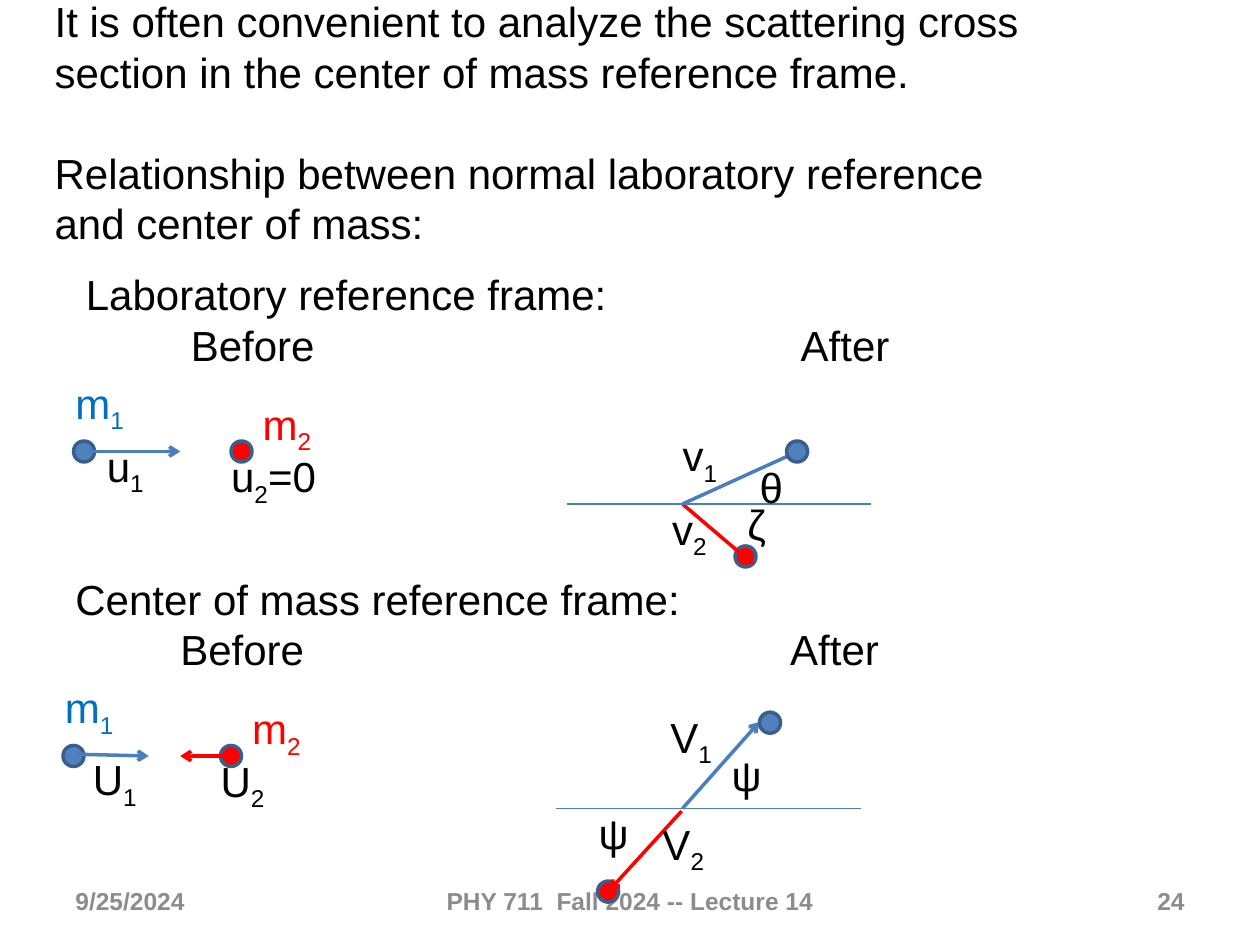
from dataclasses import dataclass

from lxml.etree import SubElement
from pptx import Presentation
from pptx.dml.color import RGBColor
from pptx.enum.shapes import MSO_CONNECTOR as Conn, MSO_SHAPE as Shape
from pptx.enum.text import MSO_ANCHOR as Anchor, MSO_AUTO_SIZE as Fit, PP_ALIGN as Align
from pptx.oxml.ns import qn
from pptx.util import Pt


@dataclass(frozen=True)
class Theme:
    font: str = "Arial"
    body: float = 24
    leading: float = 28.8
    footer: float = 14
    ink: str = "000000"
    gray: str = "8C8C8C"
    label_blue: str = "0070C0"
    blue: str = "4F81BD"
    line_blue: str = "4B7EBC"
    outline: str = "3A5F8C"
    red: str = "FF0000"
    stroke: float = 2
    hairline: float = 0.75


T = Theme()

INTRO = [
    "It is often convenient to analyze the scattering cross section in the center of mass reference frame.",
    "Relationship between normal laboratory reference and center of mass:",
]
FOOTERS = [
    ("9/25/2024", 36, 168, Align.LEFT),
    ("PHY 711  Fall 2024 -- Lecture 14", 216, 288, Align.CENTER),
    ("24", 516, 168, Align.RIGHT),
]
STAGES = "\tBefore\tAfter"
STAGE_TABS = (60, 408.5)
MASSES = [("m", "1", "", 36, 216, T.label_blue), ("m", "2", "", 143, 228, T.red)]
BALLS_BEFORE = [(48, 258, T.blue), (138, 258, T.red)]
AXIS = (324, 288, 498, 288)
RADIUS = 6

FRAMES = [
    dict(
        title="Laboratory reference frame:",
        shift=(0, 0),
        under=[(390, 288, 456, 258, T.line_blue)],
        balls=[(455.5, 258, T.blue), (426, 318, T.red)],
        over=[(49, 258, 103, 258, T.line_blue), (390, 288, 430.5, 322.5, T.red)],
        labels=[
            ("u", "1", "", 54, 252), ("u", "2", "=0", 125, 258),
            ("v", "1", "", 383, 246), ("v", "2", "", 377, 288),
            ("θ", "", "", 427, 260), ("ζ", "", "", 420, 281.5),
        ],
    ),
    dict(
        title="Center of mass reference frame:",
        shift=(-6, 174),
        under=[(390, 462, 434, 412.5, T.line_blue)],
        balls=[(440, 413, T.blue), (347.5, 509.5, T.red)],
        over=[
            (43, 431, 85, 432, T.line_blue), (132, 432, 103, 432, T.red),
            (389.5, 463.5, 348, 509, T.red),
        ],
        labels=[
            ("U", "1", "", 46, 431), ("U", "2", "", 119, 432),
            ("V", "1", "", 376, 407), ("V", "2", "", 371.5, 468),
            ("ψ", "", "", 411, 425), ("ψ", "", "", 335, 458),
        ],
    ),
]


def add_run(p, text, color=T.ink, size=T.body, bold=False, baseline=0):
    r = p.add_run()
    r.text = text
    f = r.font
    f.name, f.size, f.bold = T.font, Pt(size), bold
    f.color.rgb = RGBColor.from_string(color)
    if baseline:
        f._element.set("baseline", str(baseline))


def next_paragraph(tf, first, before=0):
    p = tf.paragraphs[0] if first else tf.add_paragraph()
    p.line_spacing, p.space_before = Pt(T.leading), Pt(before)
    p.alignment = Align.LEFT
    return p


def setup_frame(tf, anchor=Anchor.TOP):
    tf.word_wrap, tf.auto_size, tf.vertical_anchor = True, Fit.NONE, anchor
    return tf


def add_box(slide, x, y, w, h, anchor=Anchor.TOP):
    sp = slide.shapes.add_textbox(Pt(x), Pt(y), Pt(w), Pt(h))
    return setup_frame(sp.text_frame, anchor)


def add_label(slide, base, sub, rest, x, y, color=T.ink):
    p = next_paragraph(add_box(slide, x, y, 80, 36), True)
    add_run(p, base, color)
    if sub:
        add_run(p, sub, color, baseline=-25000)
    if rest:
        add_run(p, rest, color)


def add_ball(slide, cx, cy, color):
    d = Pt(2 * RADIUS)
    sp = slide.shapes.add_shape(Shape.OVAL, Pt(cx - RADIUS), Pt(cy - RADIUS), d, d)
    sp.shadow.inherit = False
    sp.fill.solid()
    sp.fill.fore_color.rgb = RGBColor.from_string(color)
    sp.line.color.rgb = RGBColor.from_string(T.outline)
    sp.line.width = Pt(T.stroke)


def add_line(slide, x1, y1, x2, y2, color, width=T.stroke, arrow=True):
    c = slide.shapes.add_connector(Conn.STRAIGHT, Pt(x1), Pt(y1), Pt(x2), Pt(y2))
    c.line.color.rgb = RGBColor.from_string(color)
    c.line.width = Pt(width)
    if arrow:
        SubElement(c.line._get_or_add_ln(), qn("a:tailEnd"), type="arrow")
    SubElement(c._element.spPr, qn("a:effectLst"))


def add_intro(slide):
    sp = slide.shapes.title
    sp.left, sp.top, sp.width, sp.height = Pt(24), Pt(-6), Pt(588), Pt(153)
    tf = setup_frame(sp.text_frame)
    for i, text in enumerate(INTRO):
        add_run(next_paragraph(tf, i == 0, T.leading if i else 0), text)


def add_heading(slide, title, dx, dy):
    tf = add_box(slide, 42 + dx, 150 + dy, 582, 65.5)
    add_run(next_paragraph(tf, True), title)
    p = next_paragraph(tf, False)
    tabs = SubElement(p._p.get_or_add_pPr(), qn("a:tabLst"))
    for pos in STAGE_TABS:
        SubElement(tabs, qn("a:tab"), pos=str(int(Pt(pos))), algn="l")
    add_run(p, STAGES)


def add_reference_frame(slide, frame):
    dx, dy = frame["shift"]
    add_heading(slide, frame["title"], dx, dy)
    for arrow in frame["under"]:
        add_line(slide, *arrow)
    for x, y, color in BALLS_BEFORE:
        add_ball(slide, x + dx, y + dy, color)
    for ball in frame["balls"]:
        add_ball(slide, *ball)
    for arrow in frame["over"]:
        add_line(slide, *arrow)
    x1, y1, x2, y2 = AXIS
    add_line(slide, x1 + dx, y1 + dy, x2 + dx, y2 + dy, T.line_blue, T.hairline, False)
    for base, sub, rest, x, y, color in MASSES:
        add_label(slide, base, sub, rest, x + dx, y + dy, color)
    for label in frame["labels"]:
        add_label(slide, *label)


def main():
    prs = Presentation()
    prs.slide_width, prs.slide_height = Pt(720), Pt(540)
    slide = prs.slides.add_slide(prs.slide_layouts[5])
    for text, x, w, align in FOOTERS:
        p = add_box(slide, x, 500.5, w, 28.75, Anchor.MIDDLE).paragraphs[0]
        p.alignment = align
        add_run(p, text, T.gray, T.footer, True)
    add_intro(slide)
    for frame in FRAMES:
        add_reference_frame(slide, frame)
    prs.save("out.pptx")


if __name__ == "__main__":
    main()
